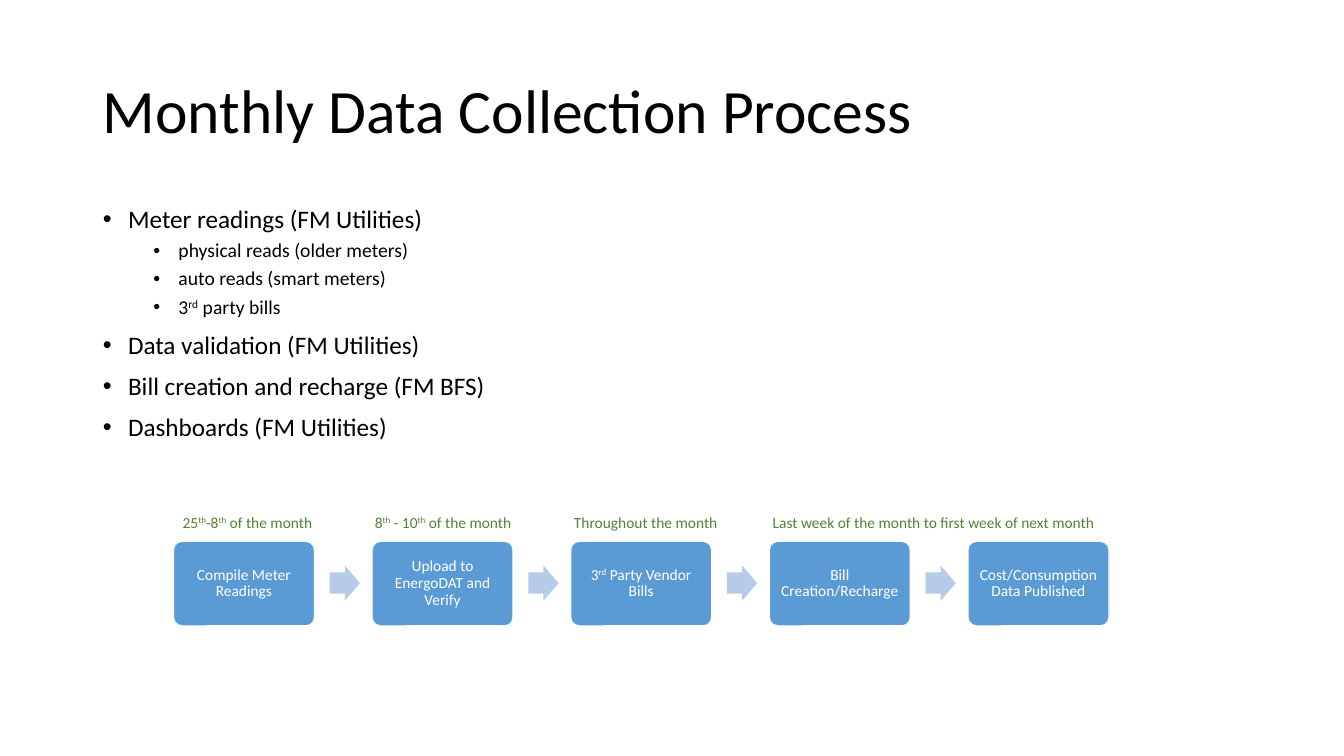
import pptx
import pptx.util
import pptx.dml.color
import pptx.enum.shapes
import pptx.enum.text
import pptx.oxml.ns
import lxml.etree

Inches = pptx.util.Inches
Align = pptx.enum.text.PP_ALIGN
Anchor = pptx.enum.text.MSO_ANCHOR
Preset = pptx.enum.shapes.MSO_SHAPE

THEME = {
    "font": "Calibri",
    "ink": "000000", "box": "5B9BD5", "box_text": "FFFFFF",
    "arrow": "B5CBE7", "timing": "548235",
    "title": 44, "level_0": 18, "level_1": 14, "small": 11,
}


def write(paragraph, text, size, color, **paragraph_format):
    """Fill a paragraph; stretches between ^ marks are superscript."""
    for name, value in paragraph_format.items():
        setattr(paragraph, name, value)
    for index, part in enumerate(text.split("^")):
        run = paragraph.add_run()
        run.text = part
        run.font.name = THEME["font"]
        run.font.size = pptx.util.Pt(THEME[size])
        run.font.color.rgb = pptx.dml.color.RGBColor.from_string(THEME[color])
        if index % 2:
            run._r.get_or_add_rPr().set("baseline", "30000")


def add_preset(slide, preset, place, color, adjustments):
    shape = slide.shapes.add_shape(preset, *map(Inches, place))
    shape.shadow.inherit = False
    shape.fill.solid()
    shape.fill.fore_color.rgb = pptx.dml.color.RGBColor.from_string(THEME[color])
    shape.line.fill.background()
    for index, value in enumerate(adjustments):
        shape.adjustments[index] = value
    return shape


presentation = pptx.Presentation()
presentation.slide_width = Inches(13.33)
presentation.slide_height = Inches(7.5)
slide = presentation.slides.add_slide(presentation.slide_layouts[1])

# Title and bullet list
title, body = slide.placeholders
places = [(title, (0.92, 0.4, 11.5, 1.45)), (body, (0.92, 2, 11.41, 2.55))]
for placeholder, place in places:
    for name, value in zip(("left", "top", "width", "height"), place):
        setattr(placeholder, name, Inches(value))
    placeholder.text_frame.auto_size = pptx.enum.text.MSO_AUTO_SIZE.NONE

title.text_frame.vertical_anchor = Anchor.MIDDLE
write(title.text_frame.paragraphs[0], "Monthly Data Collection Process",
      "title", "ink", alignment=Align.LEFT, line_spacing=0.9)

bullets = [
    (0, "Meter readings (FM Utilities)"),
    (1, "physical reads (older meters)"),
    (1, "auto reads (smart meters)"),
    (1, "3^rd^ party bills"),
    (0, "Data validation (FM Utilities)"),
    (0, "Bill creation and recharge (FM BFS)"),
    (0, "Dashboards (FM Utilities)"),
]
for index, (level, text) in enumerate(bullets):
    frame = body.text_frame
    paragraph = frame.add_paragraph() if index else frame.paragraphs[0]
    write(paragraph, text, f"level_{level}", "ink", level=level,
          line_spacing=0.9, space_before=pptx.util.Pt(10 - 5 * level))
    properties = paragraph._p.get_or_add_pPr()
    properties.set("marL", str(Inches(0.25 + 0.5 * level)))
    properties.set("indent", str(Inches(-0.25)))
    for tag, attribute, value in (("a:buFont", "typeface", "Arial"),
                                  ("a:buChar", "char", "•")):
        bullet = lxml.etree.SubElement(properties, pptx.oxml.ns.qn(tag))
        bullet.set(attribute, value)

# Process steps, joined by arrows
first_left, pitch, box_top = 1.72, 1.97, 5.37
box_width, box_height = 1.4, 0.84
steps = ["Compile Meter Readings", "Upload to EnergoDAT and Verify",
         "3^rd^ Party Vendor Bills", "Bill Creation/Recharge",
         "Cost/Consumption Data Published"]
for index, text in enumerate(steps):
    left = first_left + index * pitch
    box = add_preset(slide, Preset.ROUNDED_RECTANGLE,
                     (left, box_top, box_width, box_height), "box", [0.1])
    box.line.color.rgb = pptx.dml.color.RGBColor.from_string(THEME["box_text"])
    box.line.width = pptx.util.Pt(1)
    frame = box.text_frame
    frame.word_wrap = True
    frame.vertical_anchor = Anchor.MIDDLE
    for side in ("left", "top", "right", "bottom"):
        setattr(frame, f"margin_{side}", Inches(0.05))
    write(frame.paragraphs[0], text, "small", "box_text",
          alignment=Align.CENTER, line_spacing=0.9)
    if index < len(steps) - 1:
        add_preset(slide, Preset.RIGHT_ARROW,
                   (left + box_width + 0.15, box_top + 0.24, 0.3, 0.35),
                   "arrow", [0.6, 0.5])

# Timing above the steps
timings = [
    (1.6, 1.71, "25^th^-8^th^ of the month"),
    (3.54, 1.71, "8^th^ - 10^th^ of the month"),
    (5.47, 1.87, "Throughout the month"),
    (7.52, 3.48, "Last week of the month to first week of next month"),
]
for left, width, text in timings:
    label = slide.shapes.add_textbox(*map(Inches, (left, 5.04, width, 0.29)))
    label.text_frame.word_wrap = True
    write(label.text_frame.paragraphs[0], text, "small", "timing",
          alignment=Align.CENTER)

presentation.save("out.pptx")
